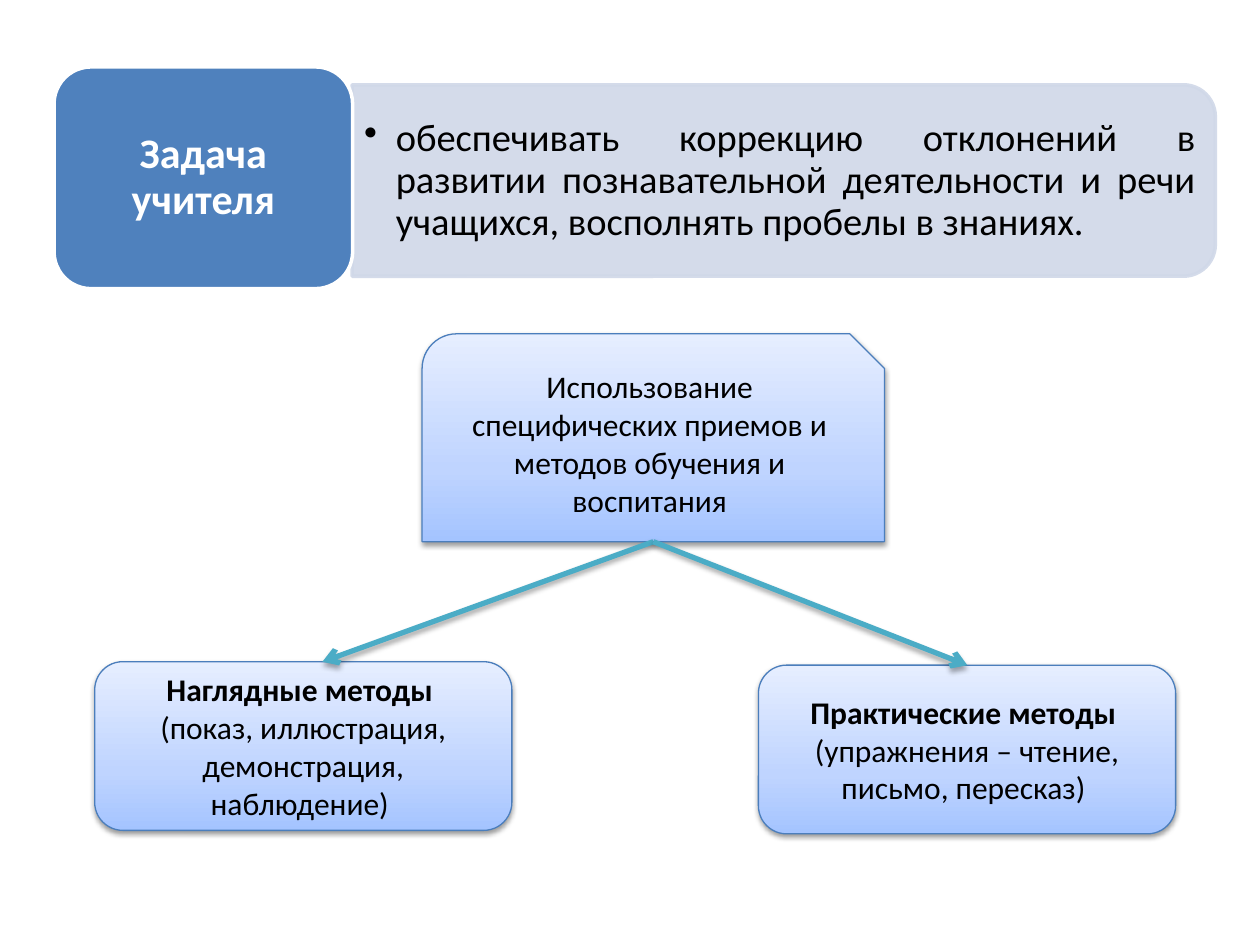
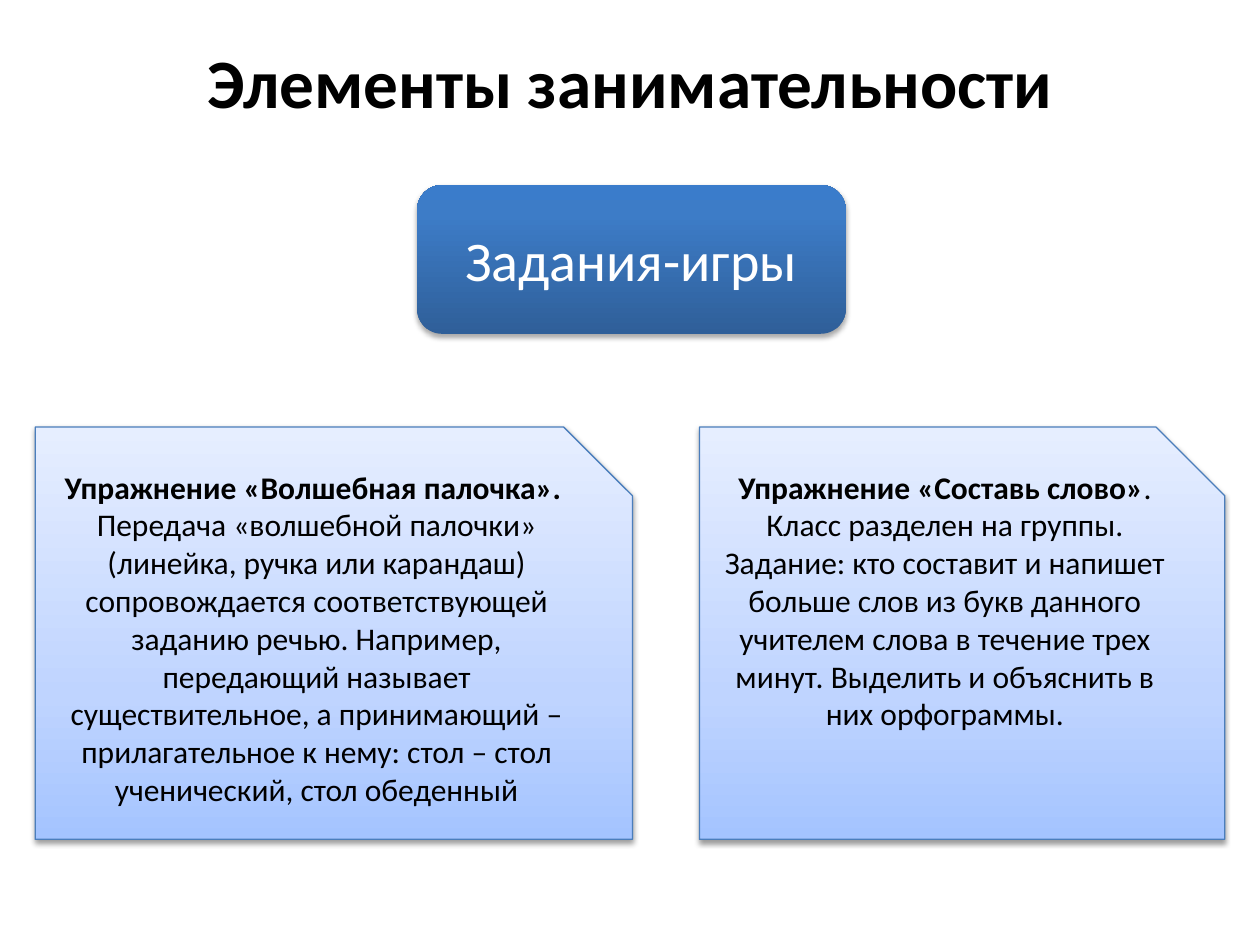
"""Two slides on a teacher's task, teaching methods and game exercises."""
from dataclasses import dataclass

from lxml.etree import SubElement
from pptx import Presentation
from pptx.dml.color import RGBColor as RGB
from pptx.enum.shapes import MSO_CONNECTOR as LINK, MSO_SHAPE as SHAPE
from pptx.enum.text import MSO_ANCHOR as ANCHOR, PP_ALIGN as ALIGN
from pptx.oxml.ns import qn
from pptx.util import Cm, Pt


@dataclass(frozen=True)
class Theme:
    font: str = "Calibri"
    dark: str = "000000"
    light: str = "FFFFFF"
    accent: str = "4F81BD"
    band: str = "D0D8E8"
    outline: str = "4B7EBC"
    arrow: str = "4BACC6"
    pale: tuple = ((0, "A4C4FF"), (35, "BFD4FF"), (100, "E6EEFF"))
    deep: tuple = ((0, "2F5F99"), (80, "3D7CC7"), (100, "3A7CCB"))
    card_shadow: tuple = (38, 1.6)
    strong_shadow: tuple = (35, 1.8)
    title: float = 39.6
    game: int = 32
    label: int = 24
    task: int = 22
    body: int = 18


T = Theme()

TASK_LABEL = "Задача учителя"
TASK = ("обеспечивать коррекцию отклонений в развитии познавательной деятельности "
        "и речи учащихся, восполнять пробелы в знаниях.")
LABEL_BOX = (1.09, 1.35, 6.02, 4.47)
BAND_BOX = (7.1, 1.71, 17.4, 3.86)
TASK_BOX = (7.11, 1.91, 17.22, 3.48)

APPROACH = "Использование специфических приемов и методов обучения и воспитания"
APPROACH_BOX = (8.51, 6.73, 9.32, 4.19)
METHODS = [
    {"box": (1.91, 13.34, 8.41, 3.4), "tip": 6.5,
     "text": [[("Наглядные методы ", True)],
              [("(показ, иллюстрация, демонстрация, наблюдение) ", False)]]},
    {"box": (15.29, 13.41, 8.41, 3.4), "tip": 19.5,
     "text": [[("Практические методы ", True)],
              [("(упражнения – чтение, письмо, пересказ) ", False)]]},
]

TITLE = "Элементы занимательности"
TITLE_BOX = (1.27, 0.76, 22.86, 1.75)
GAMES = "Задания-игры"
GAMES_BOX = (8.41, 3.73, 8.64, 3.0)
EXERCISES = [
    {"box": (0.71, 8.61, 12.04, 8.31),
     "text": [[("Упражнение «Волшебная палочка». ", True)],
              [("Передача «волшебной палочки» (линейка, ручка или карандаш) "
                "сопровождается соответствующей заданию речью. Например, передающий "
                "называет существительное, а принимающий – прилагательное к нему: "
                "стол – стол ученический, стол обеденный", False)]]},
    {"box": (14.1, 8.61, 10.59, 8.31),
     "text": [[("Упражнение «Составь слово»", True),
               (". Класс разделен на группы. Задание: кто составит и напишет больше "
                "слов из букв данного учителем слова в течение трех минут. Выделить "
                "и объяснить в них орфограммы.", False)]]},
]


def cm(box):
    return [Cm(v) for v in box]


def write(sp, text, size=T.body, color=T.dark, bold=False, align=ALIGN.CENTER,
          anchor=ANCHOR.MIDDLE, spacing=None, bullet=None):
    tf = sp.text_frame
    tf.word_wrap, tf.vertical_anchor = True, anchor
    paragraphs = [[(text, bold)]] if isinstance(text, str) else text
    for i, runs in enumerate(paragraphs):
        p = tf.add_paragraph() if i else tf.paragraphs[0]
        p.alignment = align
        if spacing:
            p.line_spacing = spacing
        if bullet:
            pPr = p._p.get_or_add_pPr()
            pPr.set("marL", str(Cm(0.64)))
            pPr.set("indent", str(-Cm(0.64)))
            SubElement(pPr, qn("a:buChar")).set("char", bullet)
        for words, heavy in runs:
            r = p.add_run()
            r.text = words
            r.font.name, r.font.size, r.font.bold = T.font, Pt(size), heavy
            r.font.color.rgb = RGB.from_string(color)


def add_color(parent, color, alpha=None):
    clr = SubElement(parent, qn("a:srgbClr"))
    clr.set("val", color)
    if alpha:
        SubElement(clr, qn("a:alpha")).set("val", str(alpha * 1000))


def add_shadow(sp, alpha, dist):
    spPr = sp.element.spPr
    effects = spPr.find(qn("a:effectLst"))
    if effects is None:
        effects = SubElement(spPr, qn("a:effectLst"))
    shadow = SubElement(effects, qn("a:outerShdw"))
    for key, value in (("blurRad", Pt(3.1)), ("dist", Pt(dist)),
                       ("dir", 90 * 60000), ("rotWithShape", 0)):
        shadow.set(key, str(int(value)))
    add_color(shadow, T.dark, alpha)


def add_shape(s, kind, box, fill, line=None, width=2.0, shadow=None):
    sp = s.shapes.add_shape(kind, *cm(box))
    sp.shadow.inherit = False
    if isinstance(fill, str):
        sp.fill.solid()
        sp.fill.fore_color.rgb = RGB.from_string(fill)
    else:
        sp.fill.gradient()
        sp.fill.gradient_angle = 90
        stops = sp.element.spPr.find(qn("a:gradFill")).find(qn("a:gsLst"))
        for old in list(stops):
            stops.remove(old)
        for pos, color in fill:
            stop = SubElement(stops, qn("a:gs"))
            stop.set("pos", str(pos * 1000))
            add_color(stop, color)
    if line:
        sp.line.color.rgb = RGB.from_string(line)
        sp.line.width = Pt(width)
    else:
        sp.line.fill.background()
    if shadow:
        add_shadow(sp, *shadow)
    return sp


def add_card(s, kind, box, text, **fmt):
    sp = add_shape(s, kind, box, T.pale, T.outline, 0.75, T.card_shadow)
    write(sp, text, **fmt)


def add_arrow(s, start, end):
    c = s.shapes.add_connector(LINK.STRAIGHT, *cm(start + end))
    c.line.color.rgb = RGB.from_string(T.arrow)
    c.line.width = Pt(3)
    SubElement(c.element.spPr.find(qn("a:ln")), qn("a:tailEnd")).set("type", "arrow")
    add_shadow(c, *T.strong_shadow)


def add_band(s, box):
    x, y, w, h = box
    shift = (w - h) / 2
    sp = add_shape(s, SHAPE.ROUND_2_SAME_RECTANGLE, (x + shift, y - shift, h, w),
                   T.band, T.band)
    sp.rotation = 90
    for clr in sp.element.spPr.iter(qn("a:srgbClr")):
        SubElement(clr, qn("a:alpha")).set("val", "90000")


def build_methods(s):
    add_band(s, BAND_BOX)
    tb = s.shapes.add_textbox(*cm(TASK_BOX))
    tf = tb.text_frame
    tf.margin_left = tf.margin_right = Cm(0.23)
    write(tb, TASK, size=T.task, align=ALIGN.JUSTIFY, spacing=0.9, bullet="•")
    label = add_shape(s, SHAPE.ROUNDED_RECTANGLE, LABEL_BOX, T.accent, T.light)
    write(label, TASK_LABEL, size=T.label, color=T.light, bold=True, spacing=0.9)
    add_card(s, SHAPE.SNIP_ROUND_RECTANGLE, APPROACH_BOX, APPROACH)
    for m in METHODS:
        add_card(s, SHAPE.ROUNDED_RECTANGLE, m["box"], m["text"])
    x, y, w, h = APPROACH_BOX
    for m in METHODS:
        add_arrow(s, (x + w / 2, y + h), (m["tip"], m["box"][1]))


def build_games(s):
    write(s.shapes.add_textbox(*cm(TITLE_BOX)), TITLE, size=T.title, bold=True)
    games = add_shape(s, SHAPE.ROUNDED_RECTANGLE, GAMES_BOX, T.deep,
                      shadow=T.strong_shadow)
    write(games, GAMES, size=T.game, color=T.light)
    for e in EXERCISES:
        add_card(s, SHAPE.SNIP_1_RECTANGLE, e["box"], e["text"], anchor=ANCHOR.TOP)


def main():
    prs = Presentation()
    prs.slide_width, prs.slide_height = Cm(25.4), Cm(19.05)
    for build in (build_methods, build_games):
        build(prs.slides.add_slide(prs.slide_layouts[6]))
    prs.save("out.pptx")


if __name__ == "__main__":
    main()
